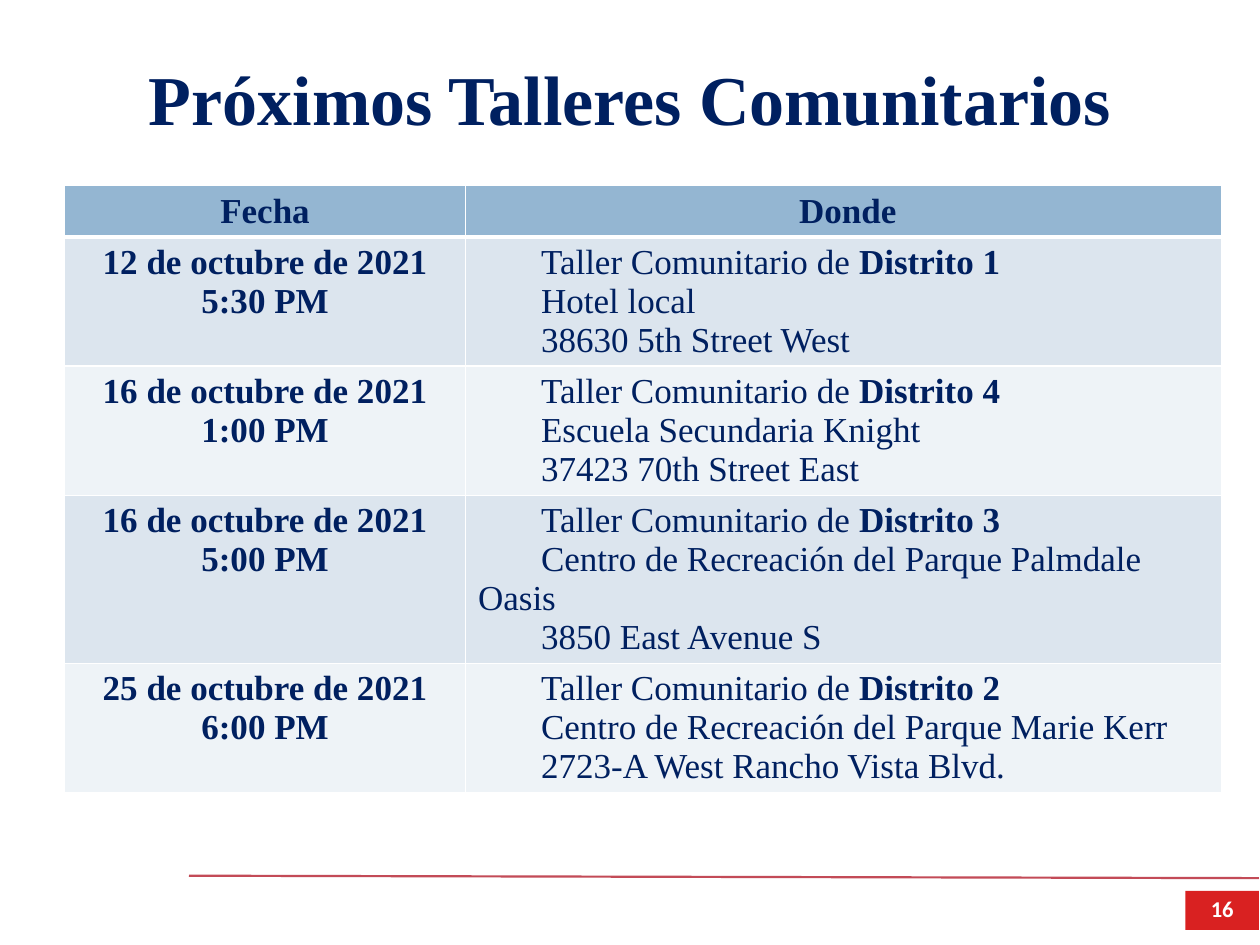
from lxml import etree
from pptx import Presentation
from pptx.dml.color import RGBColor
from pptx.enum import shapes, text
from pptx.oxml import ns
from pptx.util import Pt

NAVY, WHITE, RED = "002060", "FFFFFF", "D92121"
HEADER_FILL, BANDS = "94B6D2", ("DCE5EE", "EEF3F7")
SERIF = {"name": "Times New Roman", "size": Pt(20)}
CENTER = text.PP_ALIGN.CENTER

HEADINGS = ("Fecha", " Donde")
WORKSHOPS = [
    ("12 de octubre de 2021", "5:30 PM", "Distrito 1",
     "Hotel local", "38630 5th Street West"),
    ("16 de octubre de 2021", "1:00 PM", "Distrito 4",
     "Escuela Secundaria Knight", "37423 70th Street East"),
    ("16 de octubre de 2021", "5:00 PM", "Distrito 3",
     "Centro de Recreación del Parque Palmdale Oasis", "3850 East Avenue S"),
    ("25 de octubre de 2021", "6:00 PM", "Distrito 2",
     "Centro de Recreación del Parque Marie Kerr",
     "2723-A West Rancho Vista Blvd."),
]


def rgb(value):
    return RGBColor.from_string(value)


def apply(target, values):
    for key, value in values.items():
        setattr(target, key, value)


def add_run(paragraph, words, color=NAVY, **font):
    run = paragraph.add_run()
    run.text = words
    apply(run.font, font)
    run.font.color.rgb = rgb(color)


def set_frame(frame, inset=3.6):
    apply(frame, {f"margin_{side}": Pt(inset)
                  for side in ("left", "top", "right", "bottom")})
    apply(frame, {"word_wrap": True, "vertical_anchor": text.MSO_ANCHOR.MIDDLE})


def place(shape, box):
    apply(shape, dict(zip(("left", "top", "width", "height"), map(Pt, box))))


def add_title(slide, box, words):
    title = slide.shapes.title
    place(title, box)
    set_frame(title.text_frame)
    paragraph = title.text_frame.paragraphs[0]
    paragraph.alignment = CENTER
    add_run(paragraph, words, **{**SERIF, "size": Pt(40)}, bold=True)


def style_cell(cell, fill, bottom=1):
    # Borders come before the fill in the cell properties
    properties = cell._tc.get_or_add_tcPr()
    for side, width in (("L", 1), ("R", 1), ("T", 1), ("B", bottom)):
        edge = etree.SubElement(properties, ns.qn(f"a:ln{side}"), w=str(Pt(width)))
        solid = etree.SubElement(edge, ns.qn("a:solidFill"))
        etree.SubElement(solid, ns.qn("a:srgbClr"), val=WHITE)
    cell.fill.solid()
    cell.fill.fore_color.rgb = rgb(fill)


def write_lines(cell, lines, alignment=None, indent=0):
    """Each line is a list of (words, bold) pairs."""
    frame = cell.text_frame
    for number, parts in enumerate(lines):
        paragraph = frame.add_paragraph() if number else frame.paragraphs[0]
        paragraph.alignment = alignment
        if indent:
            properties = paragraph._p.get_or_add_pPr()
            properties.set("marL", "0")
            properties.set("indent", str(Pt(indent)))
        for words, bold in parts:
            add_run(paragraph, words, **SERIF, bold=bold)


def add_schedule(slide, box):
    table = slide.shapes.add_table(len(WORKSHOPS) + 1, 2, *map(Pt, box)).table
    table.horz_banding = False
    date_width = 229
    for column, width in zip(table.columns, (date_width, box[2] - date_width)):
        column.width = Pt(width)
    # The third workshop wraps onto one more line
    for row, height in zip(table.rows, (29, 73.6, 73.6, 95.8, 73.6)):
        row.height = Pt(height)

    # Header
    for column, heading in enumerate(HEADINGS):
        cell = table.cell(0, column)
        style_cell(cell, HEADER_FILL, bottom=3)
        write_lines(cell, [[(heading, True)]], CENTER)

    # Workshops
    for row, (date, hour, district, venue, address) in enumerate(WORKSHOPS, 1):
        when, where = table.cell(row, 0), table.cell(row, 1)
        for cell in (when, where):
            style_cell(cell, BANDS[(row - 1) % 2])
        write_lines(when, [[(date, True)], [(hour, True)]], CENTER)
        write_lines(where, [
            [("Taller Comunitario de ", False), (district, True)],
            [(venue, False)],
            [(address, False)],
        ], indent=36)


def add_footer(slide, box, number):
    left, top, width, height = box
    # Rule
    rule = slide.shapes.add_connector(
        shapes.MSO_CONNECTOR.STRAIGHT,
        Pt(left), Pt(top), Pt(left + width), Pt(top + 1.4))
    rule.line.width = Pt(1.25)
    rule.line.color.rgb = rgb("B51E2D")
    color = rule._element.spPr.find(".//" + ns.qn("a:srgbClr"))
    etree.SubElement(color, ns.qn("a:alpha"), val="80000")
    etree.SubElement(rule._element.spPr, ns.qn("a:effectLst"))

    # Page number
    badge_width, badge_height = 42, 22.3
    badge = slide.shapes.add_shape(
        shapes.MSO_SHAPE.RECTANGLE,
        Pt(left + width - badge_width), Pt(top + height - badge_height),
        Pt(badge_width), Pt(badge_height))
    badge.shadow.inherit = False
    badge.fill.solid()
    badge.fill.fore_color.rgb = rgb(RED)
    badge.line.fill.background()
    set_frame(badge.text_frame)
    paragraph = badge.text_frame.paragraphs[0]
    apply(paragraph, {"alignment": CENTER, "line_spacing": 0.9})
    add_run(paragraph, number, WHITE, name="Calibri", size=Pt(12.9), bold=True)


def main():
    deck = Presentation()
    apply(deck, {"slide_width": Pt(720), "slide_height": Pt(540)})
    slide = deck.slides.add_slide(deck.slide_layouts[5])
    add_footer(slide, (108, 500.4, 611.4, 31), "16")
    add_schedule(slide, (37, 106, 661, 345.6))
    add_title(slide, (0, 19.5, 720, 72), "Próximos Talleres Comunitarios")
    deck.save("out.pptx")


if __name__ == "__main__":
    main()
